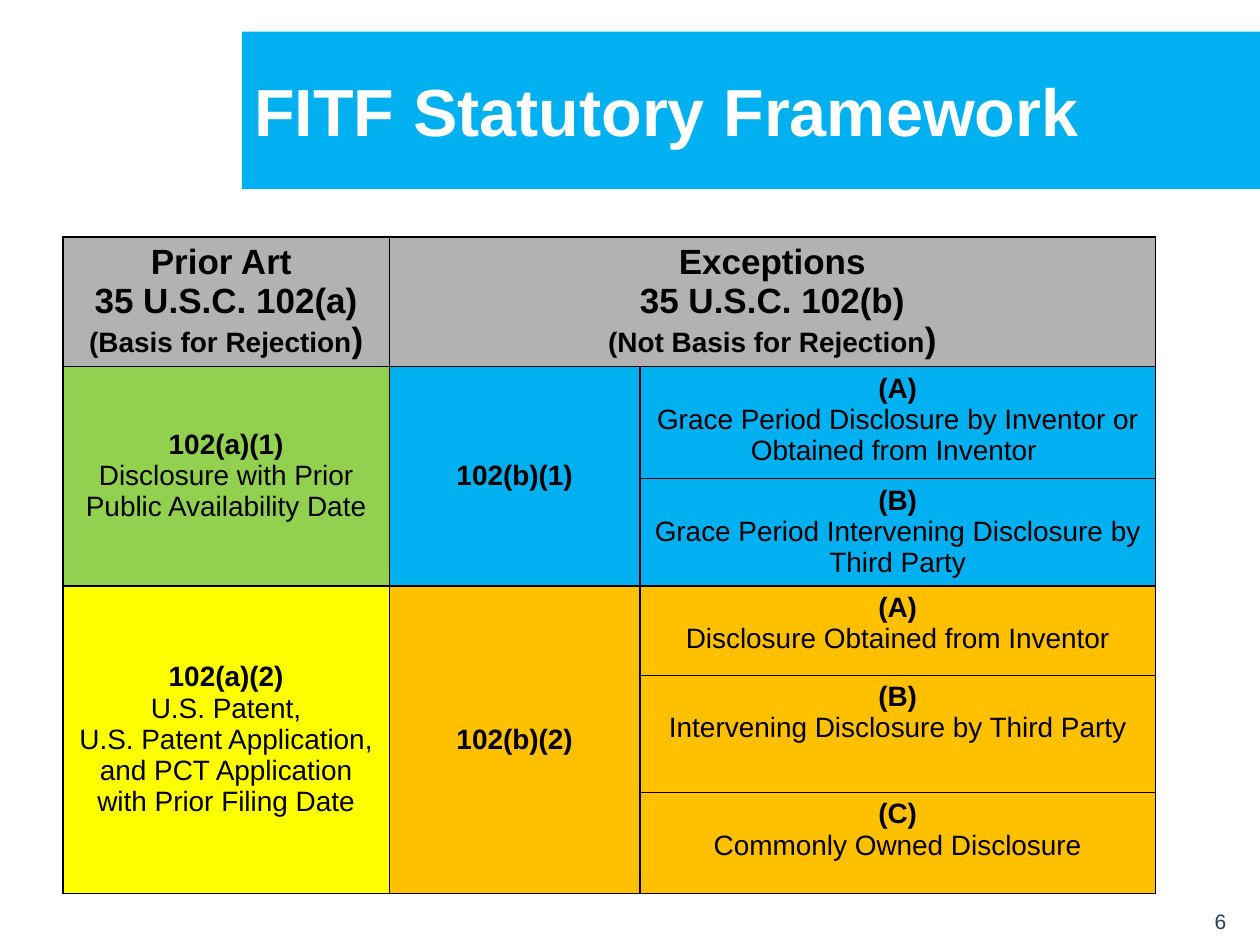
from lxml.etree import SubElement
from pptx import Presentation
from pptx.dml.color import RGBColor
from pptx.enum.shapes import MSO_SHAPE
from pptx.enum.text import MSO_ANCHOR, PP_ALIGN
from pptx.oxml.ns import qn
from pptx.util import Inches, Pt

COLUMN_WIDTHS = [2.59, 1.99, 4.09]
ROW_HEIGHTS = [0.85, 0.89, 0.85, 0.71, 0.93, 0.8]
GRAY, GREEN, BLUE, YELLOW, ORANGE = "B2B2B2", "92D050", "00B0F0", "FFFF00", "FFC000"

HEADERS = [
    (0, 0, ["Prior Art ", "35 U.S.C. 102(a)"], "(Basis for Rejection"),
    (1, 2, ["Exceptions", "35 U.S.C. 102(b)"], "(Not Basis for Rejection"),
]
PROVISIONS = [
    (1, 2, 0, GREEN, "102(a)(1)", ["Disclosure with Prior Public Availability Date"]),
    (1, 2, 1, BLUE, "102(b)(1)", []),
    (3, 5, 0, YELLOW, "102(a)(2)", [
        "U.S. Patent,",
        "U.S. Patent Application, and PCT Application with Prior Filing Date",
    ]),
    (3, 5, 1, ORANGE, "102(b)(2)", []),
]
EXCEPTIONS = [
    (BLUE, "(A)", "Grace Period Disclosure by Inventor or Obtained from Inventor "),
    (BLUE, "(B)", "Grace Period Intervening Disclosure by Third Party"),
    (ORANGE, "(A)", "Disclosure Obtained from Inventor"),
    (ORANGE, "(B)", "Intervening Disclosure by Third Party"),
    (ORANGE, "(C)", "Commonly Owned Disclosure"),
]


def color(value):
    return RGBColor.from_string(value)


def style(font, size, value="000000", bold=False):
    font.name = "Arial"
    font.size = Pt(size)
    font.bold = bold
    font.color.rgb = color(value)


def add_title(slide, text):
    banner = slide.shapes.add_shape(
        MSO_SHAPE.RECTANGLE, Inches(1.92), Inches(0.25), Inches(8.08), Inches(1.25))
    banner.shadow.inherit = False
    banner.fill.solid()
    banner.fill.fore_color.rgb = color(BLUE)
    banner.line.fill.background()
    frame = banner.text_frame
    frame.word_wrap = True
    frame.vertical_anchor = MSO_ANCHOR.MIDDLE
    heading = frame.paragraphs[0]
    heading.text = text
    heading.alignment = PP_ALIGN.LEFT
    style(heading.font, 38, "FFFFFF", bold=True)


def add_page_number(slide, number):
    box = slide.shapes.add_textbox(Inches(7.75), Inches(6.92), Inches(2.08), Inches(0.5))
    frame = box.text_frame
    frame.word_wrap = True
    frame.vertical_anchor = MSO_ANCHOR.BOTTOM
    frame.margin_bottom = Inches(0.01)
    page = frame.paragraphs[0]
    page.text = number
    page.alignment = PP_ALIGN.RIGHT
    style(page.font, 12, "273C56")


def add_borders(cell):
    properties = cell._tc.get_or_add_tcPr()
    for side in ("a:lnL", "a:lnR", "a:lnT", "a:lnB"):
        line = SubElement(properties, qn(side), w=str(Pt(1)))
        fill = SubElement(line, qn("a:solidFill"))
        SubElement(fill, qn("a:srgbClr"), val="000000")


def make_region(table, top, left, bottom, right, fill):
    for row in range(top, bottom + 1):
        for column in range(left, right + 1):
            cell = table.cell(row, column)
            add_borders(cell)
            cell.fill.solid()
            cell.fill.fore_color.rgb = color(fill)
    origin = table.cell(top, left)
    if (top, left) != (bottom, right):
        origin.merge(table.cell(bottom, right))
    return origin


def write_lines(cell, lines, size, bold_count):
    cell.text = "\n".join(lines)
    for index, paragraph in enumerate(cell.text_frame.paragraphs):
        paragraph.alignment = PP_ALIGN.CENTER
        style(paragraph.font, size, bold=index < bold_count)


def write_header(cell, lines, basis):
    write_lines(cell, lines, 20, len(lines))
    note = cell.text_frame.add_paragraph()
    note.alignment = PP_ALIGN.CENTER
    for text, size in ((basis, 16), (")", 20)):
        run = note.add_run()
        run.text = text
        style(run.font, size, bold=True)


def add_framework_table(slide):
    table = slide.shapes.add_table(
        len(ROW_HEIGHTS), len(COLUMN_WIDTHS), Inches(0.5), Inches(1.88),
        Inches(sum(COLUMN_WIDTHS)), Inches(sum(ROW_HEIGHTS))).table
    table.first_row = False
    table.horz_banding = False
    for column, width in zip(table.columns, COLUMN_WIDTHS):
        column.width = Inches(width)
    for row, height in zip(table.rows, ROW_HEIGHTS):
        row.height = Inches(height)

    for left, right, lines, basis in HEADERS:
        write_header(make_region(table, 0, left, 0, right, GRAY), lines, basis)
    for top, bottom, column, fill, section, details in PROVISIONS:
        cell = make_region(table, top, column, bottom, column, fill)
        cell.vertical_anchor = MSO_ANCHOR.MIDDLE
        write_lines(cell, [section, *details], 16, 1)
    for row, (fill, letter, detail) in enumerate(EXCEPTIONS, start=1):
        write_lines(make_region(table, row, 2, row, 2, fill), [letter, detail], 16, 1)


def main():
    presentation = Presentation()
    presentation.slide_width = Inches(10)
    presentation.slide_height = Inches(7.5)
    slide = presentation.slides.add_slide(presentation.slide_layouts[6])
    add_title(slide, "FITF Statutory Framework")
    add_framework_table(slide)
    add_page_number(slide, "6")
    presentation.save("out.pptx")


if __name__ == "__main__":
    main()
